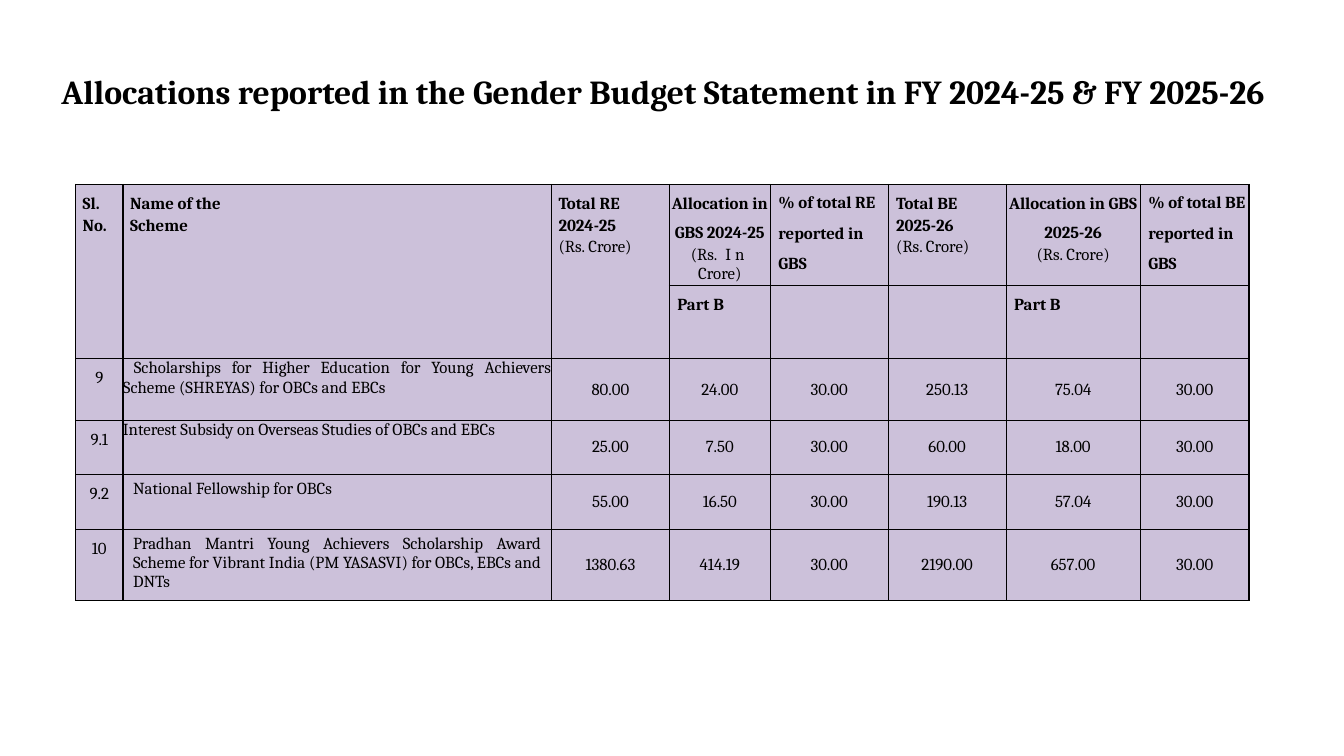
import pptx
import pptx.util
import pptx.dml.color
import pptx.enum.text
import pptx.oxml

Inch, Pt = pptx.util.Inches, pptx.util.Pt
ALIGN, ANCHOR = pptx.enum.text.PP_ALIGN, pptx.enum.text.MSO_ANCHOR

TITLE = "Allocations reported in the Gender Budget Statement in FY 2024-25 & FY 2025-26"
LILAC, BLACK = "CCC1DA", "000000"
COLS = [0.47, 4.25, 1.17, 1, 1.17, 1.17, 1.33, 1.08]
ROWS = [1, 0.73, 0.61, 0.54, 0.54, 0.71]
LEFT, TOP = 0.75, 1.83

HEADS = [
    ["Sl.", "No."],
    ["Name of the", "Scheme"],
    ["Total RE", "2024-25", "(Rs. Crore)"],
    ["Allocation in GBS 2024-25", ("(Rs.", " In ", "Crore)")],
    ["% of total RE", "reported in GBS"],
    ["Total BE", "2025-26", "(Rs. Crore)"],
    ["Allocation in GBS 2025-26", "(Rs. Crore)"],
    ["% of total BE", "reported in GBS"],
]
MERGED, CENTRED, SHARES = (0, 1, 2), (3, 6), (4, 7)
PARTS = {3: "Part B", 6: "Part B"}
SCHEMES = [
    ("9", " Scholarships for Higher Education for Young Achievers Scheme (SHREYAS) for OBCs and EBCs",
     "80.00", "24.00", "30.00", "250.13", "75.04", "30.00"),
    ("9.1", "Interest Subsidy on Overseas Studies of OBCs and EBCs",
     "25.00", "7.50", "30.00", "60.00", "18.00", "30.00"),
    ("9.2", "National Fellowship for OBCs",
     "55.00", "16.50", "30.00", "190.13", "57.04", "30.00"),
    ("10", "Pradhan Mantri Young Achievers Scholarship Award Scheme for Vibrant India (PM YASASVI) for OBCs, EBCs and DNTs",
     "1380.63", "414.19", "30.00", "2190.00", "657.00", "30.00"),
]
PADDED = (2, 3)

FIXED = {"line_spacing": Pt(20.9)}
LOOSE = {"space_before": Pt(1.6)}
FIRST = {"line_spacing": Pt(20.4)}
NEXT = {"line_spacing": Pt(21.6)}
MID = {"alignment": ALIGN.CENTER}
FULL = {"alignment": ALIGN.JUSTIFY}
FLUSH = {f"margin_{side}": 0 for side in ("left", "right", "top", "bottom")}
BORDER = ('<a:{} xmlns:a="http://schemas.openxmlformats.org/drawingml/2006/main" w="12700">'
          '<a:solidFill><a:srgbClr val="{}"/></a:solidFill></a:{}>')


def apply(item, form):
    for name, value in form.items():
        setattr(item, name, value)


def tint(code):
    return pptx.dml.color.RGBColor.from_string(code)


def write(para, text, form, size=12, bold=False):
    apply(para, form)
    for piece in (text if isinstance(text, tuple) else (text,)):
        run = para.add_run()
        run.text = piece
        apply(run.font, {"name": "Cambria", "size": Pt(size), "bold": bold})
        run.font.color.rgb = tint(BLACK)
        if piece == " In ":
            run.font._element.set("spc", "300")


def indent(para, col):
    para._p.get_or_add_pPr().set("marL", str(Inch(0.08 if col > 2 else 0.07)))


def style(cell):
    cell.fill.solid()
    cell.fill.fore_color.rgb = tint(LILAC)
    apply(cell, FLUSH)
    for spot, edge in enumerate(("lnL", "lnR", "lnT", "lnB")):
        line = pptx.oxml.parse_xml(BORDER.format(edge, BLACK, edge))
        cell._tc.get_or_add_tcPr().insert(spot, line)


def head(cell, col, lines):
    frame = cell.text_frame
    for spot, text in enumerate(lines):
        para = frame.add_paragraph() if spot else frame.paragraphs[0]
        form = (FIRST, NEXT) if col in SHARES else (FIXED, LOOSE)
        write(para, text, form[min(spot, 1)], bold=text[0][0] != "(")
        if col in CENTRED and len(lines) > 1:
            apply(para, MID)
        else:
            indent(para, col)


def body(cell, row, col, text):
    if col == 1:
        form = FULL
        if row in PADDED:
            apply(cell, {"margin_left": Inch(0.1), "margin_right": Inch(0.1), "margin_top": Inch(0.05)})
    elif col == 0:
        form = {**MID, **FIXED}
    else:
        form = MID
        cell.vertical_anchor = ANCHOR.MIDDLE
    write(cell.text_frame.paragraphs[0], text, form)


def main():
    deck = pptx.Presentation()
    apply(deck, {"slide_width": Inch(13.33), "slide_height": Inch(7.5)})
    slide = deck.slides.add_slide(deck.slide_layouts[5])

    title = slide.shapes.title
    apply(title, {"left": Inch(0.61), "top": Inch(0.55), "width": Inch(12.22), "height": Inch(0.57)})
    apply(title.text_frame, {**FLUSH, "margin_top": Inch(0.07), "word_wrap": True,
                             "vertical_anchor": ANCHOR.TOP})
    write(title.text_frame.paragraphs[0], TITLE,
          {"alignment": ALIGN.LEFT, "line_spacing": Pt(34.6), "space_before": Pt(5.3)}, 24, True)

    table = slide.shapes.add_table(len(ROWS), len(COLS), Inch(LEFT), Inch(TOP),
                                   Inch(sum(COLS)), Inch(sum(ROWS))).table
    apply(table, {"first_row": False, "horz_banding": False})
    for col, width in zip(table.columns, COLS):
        col.width = Inch(width)
    for row, height in zip(table.rows, ROWS):
        row.height = Inch(height)
    for cell in table.iter_cells():
        style(cell)
    for col in MERGED:
        table.cell(0, col).merge(table.cell(1, col))
    for col, lines in enumerate(HEADS):
        head(table.cell(0, col), col, lines)
    for col, text in PARTS.items():
        head(table.cell(1, col), col, [text])
    for row, scheme in enumerate(SCHEMES):
        for col, text in enumerate(scheme):
            body(table.cell(row + 2, col), row, col, text)

    deck.save("out.pptx")


if __name__ == "__main__":
    main()
